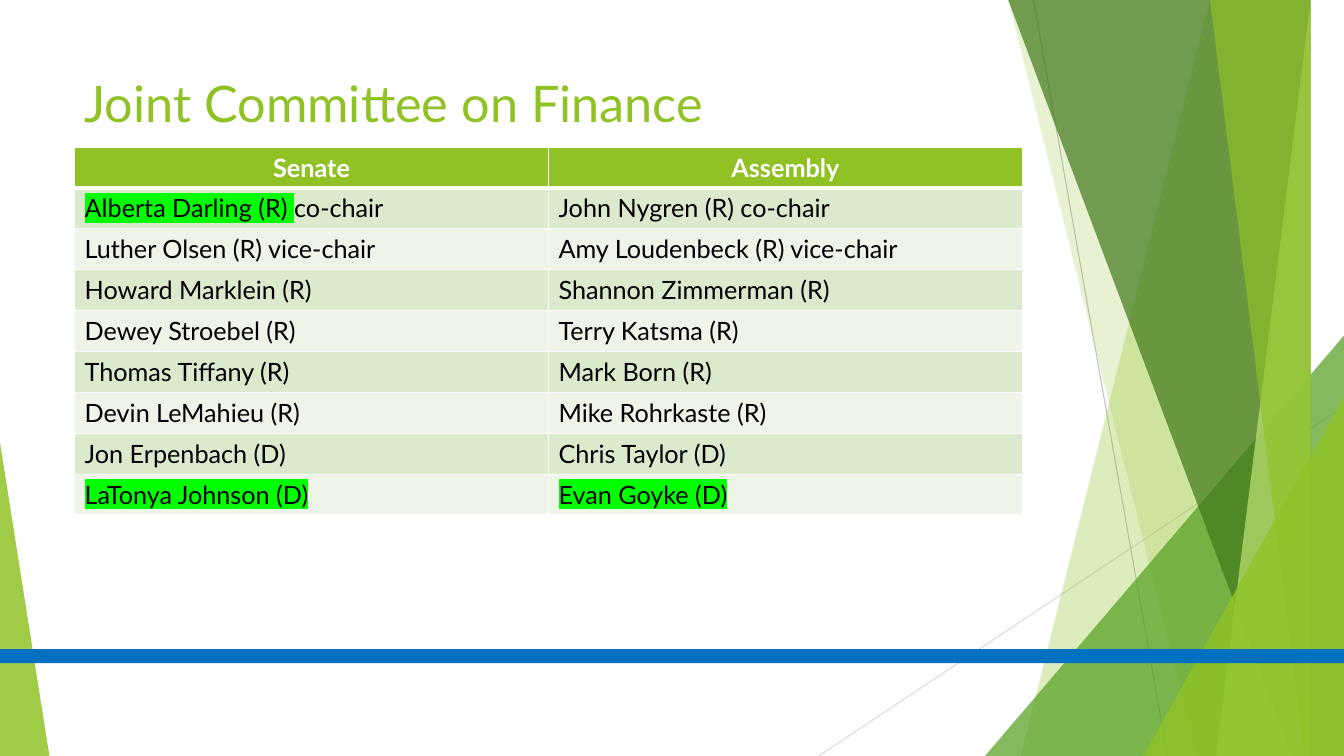
from dataclasses import dataclass

import pptx
import pptx.dml.color
import pptx.enum.shapes
import pptx.enum.text
import pptx.oxml
import pptx.oxml.ns
import pptx.util
from pptx.util import Inches

WIDTH, HEIGHT = 13.33, 7.5
FONT = "Lato"
GREEN, WHITE, BLACK, BLUE = "90C226", "FFFFFF", "000000", "0070C0"
BANDS = ("DBE9CD", "EEF4E8")
HIGHLIGHT = "00FF00"
LEFT, CONTENT_WIDTH = 0.74, 9.4
ROW_HEIGHT = 3.65 / 9


@dataclass
class Ray:
    start: tuple[float, float]
    end: tuple[float, float]
    color: str


@dataclass
class Wedge:
    """Full-height panel reaching the right edge, with a slanted left side."""
    top_x: float
    bottom_x: float
    color: str
    opacity: int


@dataclass
class Corner:
    """Right triangle standing on the bottom edge; apex 0 is left, 1 is right."""
    left: float
    top: float
    width: float
    apex: int
    color: str
    opacity: int


@dataclass
class Member:
    name: str
    role: str = ""
    marked: bool = False


RAYS = [
    Ray((10.25, 0), (11.58, HEIGHT), "BFBFBF"),
    Ray((WIDTH, 4.03), (8.12, HEIGHT), "D9D9D9"),
]
FACETS = [
    Wedge(12.28, 10.04, GREEN, 30),
    Wedge(10.5, 11.83, GREEN, 20),
    Corner(9.77, 3.33, 3.56, 1, "54A021", 72),
    Wedge(10.21, 12.91, "3F7819", 70),
    Wedge(13.03, 11.92, "C0E474", 70),
    Wedge(11.96, 13.18, GREEN, 65),
    Corner(11.34, 3.93, 1.99, 1, GREEN, 80),
    Corner(0, 4.39, 0.49, 0, GREEN, 85),
]
HEADERS = ("Senate", "Assembly")
MEMBERS = [
    (Member("Alberta Darling (R) ", "co-chair", True), Member("John Nygren (R) co-chair")),
    (Member("Luther Olsen (R) vice-chair"), Member("Amy Loudenbeck (R) vice-chair")),
    (Member("Howard Marklein (R)"), Member("Shannon Zimmerman (R)")),
    (Member("Dewey Stroebel (R)"), Member("Terry Katsma (R)")),
    (Member("Thomas Tiffany (R)"), Member("Mark Born (R)")),
    (Member("Devin LeMahieu (R)"), Member("Mike Rohrkaste (R)")),
    (Member("Jon Erpenbach (D)"), Member("Chris Taylor (D)")),
    (Member("LaTonya Johnson (D)", marked=True), Member("Evan Goyke (D)", marked=True)),
]


def rgb(color: str) -> pptx.dml.color.RGBColor:
    return pptx.dml.color.RGBColor.from_string(color)


def parse(xml: str):
    """Build one drawing element; xml is its tag, attributes and content."""
    tag = xml.split(">")[0].split(" ")[0].rstrip("/").lstrip("<")
    declared = xml.replace(f"<{tag}", f"<{tag} {pptx.oxml.ns.nsdecls('a')}", 1)
    return pptx.oxml.parse_xml(declared)


def paint(sp, color: str, opacity: int = 100) -> None:
    sp.shadow.inherit = False
    sp.fill.solid()
    sp.fill.fore_color.rgb = rgb(color)
    sp.line.fill.background()
    if opacity < 100:
        fill_color = sp._element.spPr.find(".//" + pptx.oxml.ns.qn("a:srgbClr"))
        fill_color.append(parse(f'<a:alpha val="{opacity * 1000}"/>'))


def draw_ray(s, ray: Ray) -> None:
    line = s.shapes.add_connector(
        pptx.enum.shapes.MSO_CONNECTOR.STRAIGHT,
        *(Inches(v) for v in ray.start + ray.end))
    line.line.color.rgb = rgb(ray.color)
    line.line.width = pptx.util.Pt(0.75)
    line._element.spPr.append(parse("<a:effectLst/>"))


def draw_facet(s, facet: Wedge | Corner) -> None:
    if isinstance(facet, Wedge):
        outline = s.shapes.build_freeform(facet.top_x, 0, scale=Inches(1))
        outline.add_line_segments(
            [(WIDTH, 0), (WIDTH, HEIGHT), (facet.bottom_x, HEIGHT)], close=True)
        sp = outline.convert_to_shape()
    else:
        sp = s.shapes.add_shape(
            pptx.enum.shapes.MSO_SHAPE.ISOSCELES_TRIANGLE,
            Inches(facet.left), Inches(facet.top),
            Inches(facet.width), Inches(HEIGHT - facet.top))
        sp.adjustments[0] = facet.apex
    paint(sp, facet.color, facet.opacity)


def format_run(r, size: float, color: str, bold: bool = False, marked: bool = False) -> None:
    r.font.size = pptx.util.Pt(size)
    r.font.bold = bold
    r.font.color.rgb = rgb(color)
    r.font.name = FONT
    if marked:
        latin = r._r.rPr.find(pptx.oxml.ns.qn("a:latin"))
        latin.addprevious(
            parse(f'<a:highlight><a:srgbClr val="{HIGHLIGHT}"/></a:highlight>'))


def format_cell(cell, fill: str, top: int = 1, bottom: int = 1) -> None:
    """Set white borders, with widths in points, and then the fill."""
    tc_pr = cell._tc.get_or_add_tcPr()
    for side, width in zip("LRTB", (1, 1, top, bottom)):
        tc_pr.append(parse(
            f'<a:ln{side} w="{pptx.util.Pt(width)}"><a:solidFill>'
            f'<a:srgbClr val="{WHITE}"/></a:solidFill></a:ln{side}>'))
    cell.fill.solid()
    cell.fill.fore_color.rgb = rgb(fill)


def draw_title(s) -> None:
    box = s.shapes.add_textbox(
        Inches(LEFT), Inches(0.67), Inches(CONTENT_WIDTH), Inches(1.44))
    tf = box.text_frame
    tf.word_wrap = True
    tf.text = "Joint Committee on Finance"
    format_run(tf.paragraphs[0].runs[0], 36, GREEN)


def draw_committee(s) -> None:
    row_count = len(MEMBERS) + 1
    table = s.shapes.add_table(
        row_count, len(HEADERS), Inches(LEFT), Inches(1.46),
        Inches(CONTENT_WIDTH), Inches(ROW_HEIGHT * row_count)).table

    for col, header in enumerate(HEADERS):
        cell = table.cell(0, col)
        format_cell(cell, GREEN, bottom=3)
        cell.text_frame.text = header
        p = cell.text_frame.paragraphs[0]
        p.alignment = pptx.enum.text.PP_ALIGN.CENTER
        format_run(p.runs[0], 18, WHITE, bold=True)

    for row, pair in enumerate(MEMBERS, start=1):
        for col, member in enumerate(pair):
            cell = table.cell(row, col)
            format_cell(cell, BANDS[(row - 1) % 2], top=3 if row == 1 else 1)
            cell.text_frame.text = member.name
            p = cell.text_frame.paragraphs[0]
            format_run(p.runs[0], 18, BLACK, marked=member.marked)
            if member.role:
                r = p.add_run()
                r.text = member.role
                format_run(r, 18, BLACK)


def main() -> None:
    prs = pptx.Presentation()
    prs.slide_width, prs.slide_height = Inches(WIDTH), Inches(HEIGHT)
    s = prs.slides.add_slide(prs.slide_layouts[6])
    for ray in RAYS:
        draw_ray(s, ray)
    for facet in FACETS:
        draw_facet(s, facet)
    stripe = s.shapes.add_shape(
        pptx.enum.shapes.MSO_SHAPE.RECTANGLE,
        Inches(0), Inches(6.44), Inches(WIDTH), Inches(0.14))
    paint(stripe, BLUE)
    draw_title(s)
    draw_committee(s)
    prs.save("out.pptx")


if __name__ == "__main__":
    main()
